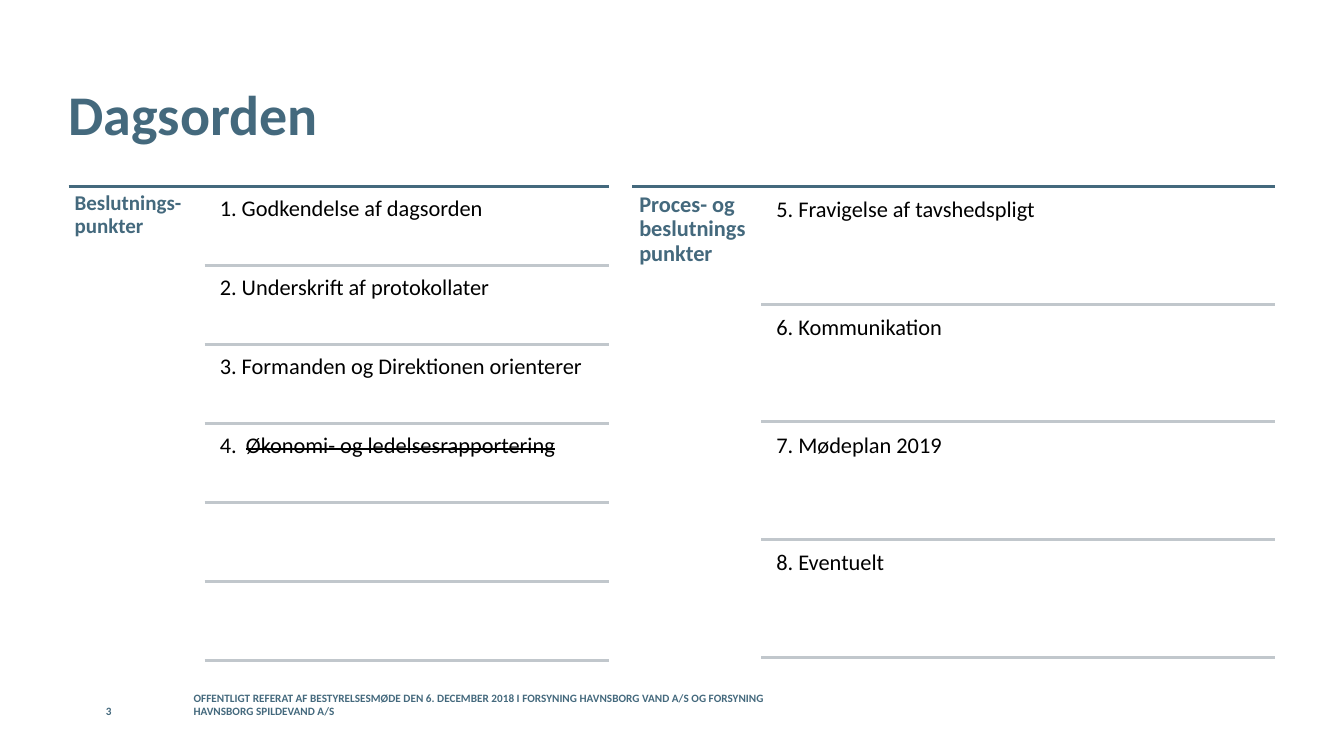
"""Build the agenda slide with two columns of numbered meeting items."""
import pptx
import pptx.dml.color
import pptx.enum.shapes
import pptx.enum.text
import pptx.oxml.ns
import pptx.util
from lxml import etree
from pptx.util import Inches

COLOURS = {"heading": "44697D", "rule": "C1C7CC", "item": "000000"}
FONT = "Calibri"
TOP = 1.85
ANCHOR = pptx.enum.text.MSO_ANCHOR
FOOTER = (
    "OFFENTLIGT REFERAT AF BESTYRELSESMØDE DEN 6. DECEMBER 2018 I FORSYNING "
    "HAVNSBORG VAND A/S OG FORSYNING HAVNSBORG SPILDEVAND A/S"
)
DECISIONS = [
    [("1. Godkendelse af dagsorden", False)],
    [("2. Underskrift af protokollater", False)],
    [("3. Formanden og Direktionen orienterer", False)],
    [("4.\t", False), ("Økonomi- og ledelsesrapportering", True)],
    [],
    [],
]
PROCESSES = [
    [("5. Fravigelse af tavshedspligt", False)],
    [("6. Kommunikation", False)],
    [("7. Mødeplan 2019", False)],
    [("8. Eventuelt", False)],
]


def add_tab_stop(para, position):
    """Set one left tab stop on a paragraph."""
    qn = pptx.oxml.ns.qn
    tabs = etree.SubElement(para._p.get_or_add_pPr(), qn("a:tabLst"))
    etree.SubElement(tabs, qn("a:tab"), pos=str(Inches(position)), algn="l")


def add_text(shapes, place, runs, size, colour, bold=False, inset=0.0,
             anchor=ANCHOR.TOP, spacing=None):
    """Add a wrapped text box made of (text, struck) runs."""
    box = shapes.add_textbox(*map(Inches, place))
    frame = box.text_frame
    frame.word_wrap = True
    frame.vertical_anchor = anchor
    frame.margin_left = frame.margin_right = Inches(inset)
    frame.margin_top = frame.margin_bottom = Inches(inset)
    para = frame.paragraphs[0]
    if spacing:
        para.line_spacing = spacing
    if any("\t" in text for text, struck in runs):
        add_tab_stop(para, 0.26)
    for text, struck in runs:
        span = para.add_run()
        span.text = text
        span.font.name = FONT
        span.font.size = pptx.util.Pt(size)
        span.font.bold = bold
        span.font.color.rgb = pptx.dml.color.RGBColor.from_string(COLOURS[colour])
        if struck:
            span.font._element.set("strike", "sngStrike")


def add_rule(shapes, left, right, top, colour):
    """Add a horizontal line without shadow."""
    line = shapes.add_connector(
        pptx.enum.shapes.MSO_CONNECTOR.STRAIGHT,
        Inches(left), Inches(top), Inches(right), Inches(top),
    )
    line.line.color.rgb = pptx.dml.color.RGBColor.from_string(COLOURS[colour])
    line.line.width = pptx.util.Pt(2)
    etree.SubElement(line._element.spPr, pptx.oxml.ns.qn("a:effectLst"))


def add_column(page, left, right, heading, size, inset, heading_width, pitch, gap, items):
    """Add a grouped heading with evenly spaced, ruled items beside it."""
    shapes = page.shapes.add_group_shape().shapes
    add_rule(shapes, left, right, TOP, "heading")
    add_text(shapes, (left, TOP, heading_width, 4.74), [(heading, False)], size,
             "heading", bold=True, inset=inset, spacing=0.9)
    rule_left = left + heading_width
    text_left = rule_left + 0.08
    for index, runs in enumerate(items):
        top = TOP + index * pitch
        if runs:
            place = (text_left, top + gap, right - text_left, pitch - gap)
            add_text(shapes, place, runs, 16, "item", inset=0.07, spacing=0.9)
        add_rule(shapes, rule_left, right, top + pitch, "rule")


def main():
    """Create the deck and save it."""
    deck = pptx.Presentation()
    deck.slide_width, deck.slide_height = Inches(13.33), Inches(7.5)
    page = deck.slides.add_slide(deck.slide_layouts[6])
    add_text(page.shapes, (0.68, 0.4, 11.5, 1.45), [("Dagsorden", False)], 40,
             "heading", bold=True, anchor=ANCHOR.MIDDLE)
    add_column(page, 0.68, 6.04, "Beslutnings-punkter", 15, 0.06, 1.35,
               4.7 / len(DECISIONS), 0.04, DECISIONS)
    add_column(page, 6.27, 12.65, "Proces- og beslutningspunkter", 16, 0.07, 1.28,
               4.67 / len(PROCESSES), 0.05, PROCESSES)
    for left, width, text in ((1.92, 5.67, FOOTER), (1.05, 0.68, "3")):
        add_text(page.shapes, (left, 6.93, width, 0.19), [(text, False)], 8,
                 "heading", bold=True, anchor=ANCHOR.BOTTOM)
    deck.save("out.pptx")


if __name__ == "__main__":
    main()
